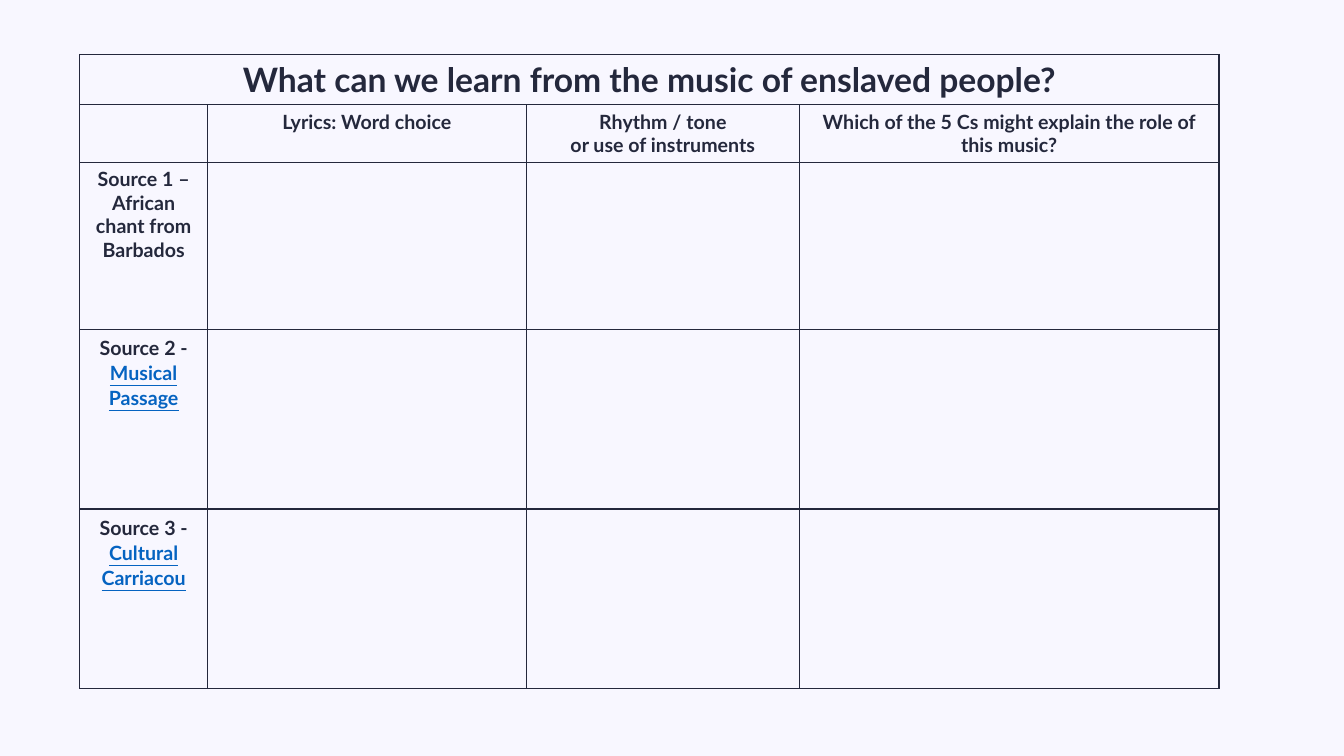
import pptx
import pptx.dml.color
import pptx.enum.text
import pptx.oxml
import pptx.oxml.ns
import pptx.util

COLOURS = {"background": "F8F7FF", "ink": "24283C", "link": "0563C1"}
FONT = "Lato"
SLIDE_SIZE = (13.33, 7.5)
TABLE_BOX = (0.79, 0.54, 11.3, 6.29)
COLUMN_SHARES = (1.27, 3.16, 2.71, 4.16)
ROW_SHARES = (0.5, 0.57, 1.66, 1.78, 1.78)
TITLE = "What can we learn from the music of enslaved people?"
HEADINGS = (
    ("Lyrics: Word choice",),
    ("Rhythm / tone", "or use of instruments"),
    ("Which of the 5 Cs might explain the role of this music?",),
)
SOURCES = (
    ("Source 1 – African chant from Barbados", None),
    ("Source 2 - ", "Musical Passage"),
    ("Source 3 - ", "Cultural Carriacou"),
)


def colour(name):
    """Return the named colour."""
    return pptx.dml.color.RGBColor.from_string(COLOURS[name])


def add_run(paragraph, text, size=14, ink="ink", underline=False):
    """Add one bold run to a centred paragraph."""
    paragraph.alignment = pptx.enum.text.PP_ALIGN.CENTER
    run = paragraph.add_run()
    run.text = text
    run.font.name = FONT
    run.font.size = pptx.util.Pt(size)
    run.font.bold = True
    run.font.underline = underline
    run.font.color.rgb = colour(ink)


def style_cell(cell):
    """Give a cell thin ink borders on all sides and no fill."""
    properties = cell._tc.get_or_add_tcPr()
    for side in ("lnL", "lnR", "lnT", "lnB"):
        properties.append(pptx.oxml.parse_xml(
            f'<a:{side} {pptx.oxml.ns.nsdecls("a")} w="{pptx.util.Pt(1)}">'
            f'<a:solidFill><a:srgbClr val="{COLOURS["ink"]}"/></a:solidFill>'
            f'</a:{side}>'))
    cell.fill.background()


def set_lengths(items, attribute, shares, total):
    """Divide a total length among columns or rows by share."""
    for item, share in zip(items, shares):
        setattr(item, attribute, pptx.util.Inches(total * share / sum(shares)))


def fill_headings(table):
    """Write the title across the top and the headings below it."""
    table.cell(0, 0).merge(table.cell(0, len(COLUMN_SHARES) - 1))
    add_run(table.cell(0, 0).text_frame.paragraphs[0], TITLE, size=24)
    for column, lines in enumerate(HEADINGS, start=1):
        paragraph = table.cell(1, column).text_frame.paragraphs[0]
        for index, line in enumerate(lines):
            if index:
                paragraph.add_line_break()
            add_run(paragraph, line)


def fill_sources(table):
    """Write the music sources down the first column."""
    for row, (label, link) in enumerate(SOURCES, start=2):
        paragraph = table.cell(row, 0).text_frame.paragraphs[0]
        add_run(paragraph, label)
        if link:
            paragraph.line_spacing = 1.07
            paragraph.space_after = pptx.util.Pt(8)
            add_run(paragraph, link, ink="link", underline=True)


def add_worksheet(slide, box):
    """Place the worksheet table in the given box."""
    frame = slide.shapes.add_table(
        len(ROW_SHARES), len(COLUMN_SHARES), *map(pptx.util.Inches, box))
    table = frame.table
    table.first_row = table.horz_banding = False
    set_lengths(table.columns, "width", COLUMN_SHARES, box[2])
    set_lengths(table.rows, "height", ROW_SHARES, box[3])
    for cell in table.iter_cells():
        style_cell(cell)
    fill_headings(table)
    fill_sources(table)


def main():
    """Build and save the presentation."""
    presentation = pptx.Presentation()
    presentation.slide_width, presentation.slide_height = map(
        pptx.util.Inches, SLIDE_SIZE)
    slide = presentation.slides.add_slide(presentation.slide_layouts[6])
    slide.background.fill.solid()
    slide.background.fill.fore_color.rgb = colour("background")
    add_worksheet(slide, TABLE_BOX)
    presentation.save("out.pptx")


if __name__ == "__main__":
    main()
